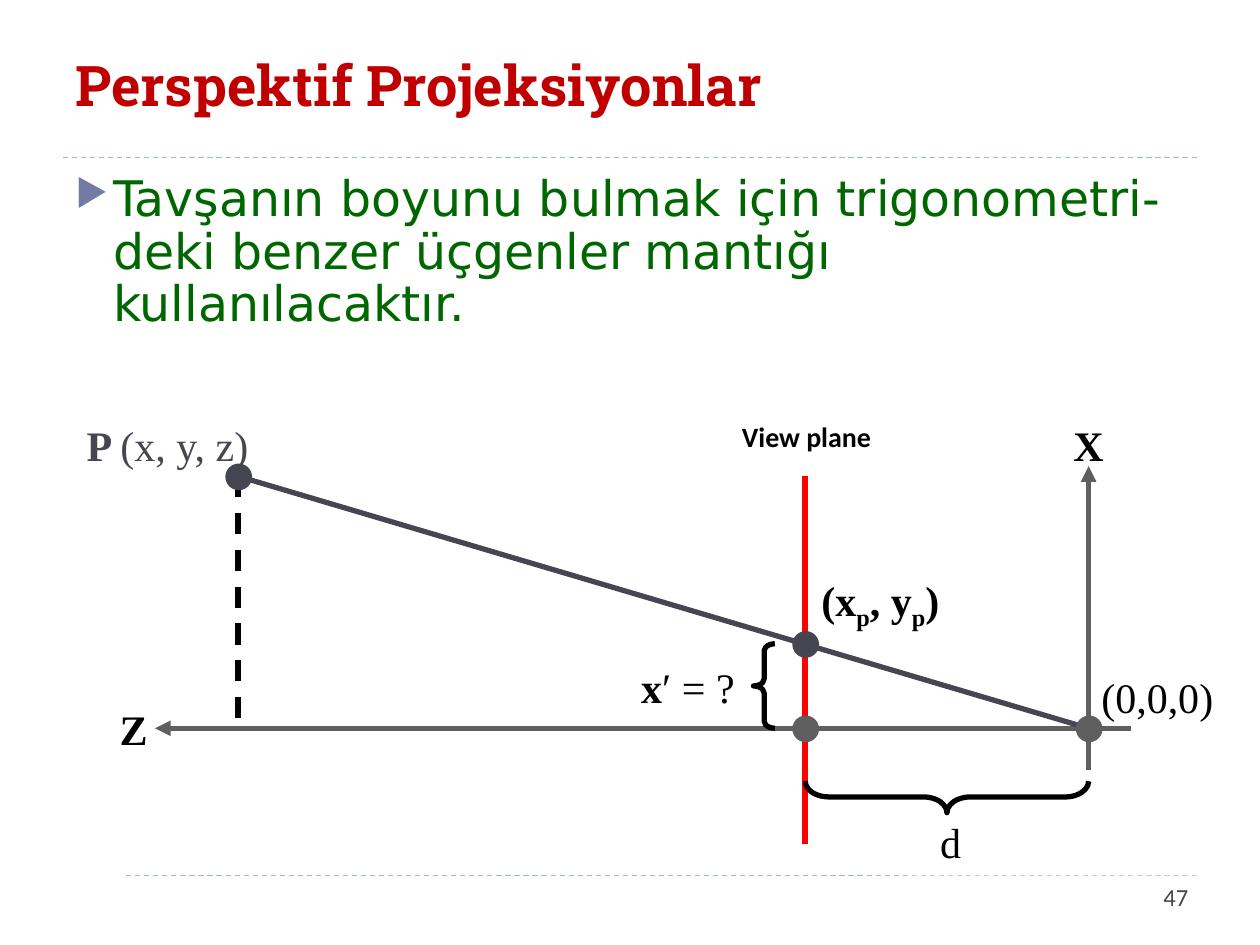
from lxml.etree import SubElement
from pptx import Presentation
from pptx.dml.color import RGBColor
from pptx.enum.dml import MSO_LINE
from pptx.enum.shapes import MSO_CONNECTOR, MSO_SHAPE
from pptx.enum.text import MSO_ANCHOR, PP_ALIGN
from pptx.oxml.ns import qn
from pptx.util import Inches, Pt

WHITE = RGBColor(0xFF, 0xFF, 0xFF)
BLACK = RGBColor(0x00, 0x00, 0x00)
RED = RGBColor(0xFF, 0x00, 0x00)
CRIMSON = RGBColor(0xC0, 0x00, 0x00)
GREEN = RGBColor(0x00, 0x66, 0x00)
SLATE = RGBColor(0x46, 0x46, 0x53)
GRAY = RGBColor(0x5F, 0x5F, 0x5F)
RULE_BLUE = RGBColor(0x9F, 0xB8, 0xCD)
BULLET_BLUE = RGBColor(0x72, 0x7C, 0xA3)
SERIF = "Times New Roman"

deck = Presentation()
deck.slide_width = Inches(10)
deck.slide_height = Inches(7.5)
page = deck.slides.add_slide(deck.slide_layouts[6])


def add_line(start, end, color, width=3, dashed=False, arrow=False):
    line = page.shapes.add_connector(
        MSO_CONNECTOR.STRAIGHT, *[Inches(value) for value in start + end]
    )
    line.line.color.rgb = color
    line.line.width = Pt(width)
    if dashed:
        line.line.dash_style = MSO_LINE.DASH
    if arrow:
        SubElement(line.line._get_or_add_ln(), qn("a:tailEnd"), type="triangle")
    SubElement(line._element.spPr, qn("a:effectLst"))


def add_text(place, spans, size, font, color, align=PP_ALIGN.LEFT,
             anchor=MSO_ANCHOR.TOP, wrap=True):
    box = page.shapes.add_textbox(*[Inches(value) for value in place])
    box.text_frame.word_wrap = wrap
    box.text_frame.vertical_anchor = anchor
    para = box.text_frame.paragraphs[0]
    para.alignment = align
    para.font.size = Pt(size)
    para.font.name = font
    para.font.color.rgb = color
    for text, bold in spans:
        span = para.add_run()
        span.text = text
        span.font.bold = bold
    return box


for left, top in [(0.5, 6.95), (0.5, 1.25)]:
    add_line((left, top), (9.5, top), RULE_BLUE, 0.75, dashed=True)

corner = page.shapes.add_shape(
    MSO_SHAPE.RECTANGLE, Inches(0.35), Inches(6.82), Inches(0.63), Inches(0.63)
)
corner.shadow.inherit = False
corner.fill.solid()
corner.fill.fore_color.rgb = WHITE
corner.line.fill.background()

add_text((0.5, 0.13, 9, 1.08), [("Perspektif Projeksiyonlar", True)],
         32, "Roboto Slab", CRIMSON, anchor=MSO_ANCHOR.MIDDLE)
number = add_text((7.2, 6.95, 2.33, 0.4), [("47", False)], 14, "Calibri", SLATE, PP_ALIGN.RIGHT)
number.fill.solid()
number.fill.fore_color.rgb = WHITE

sentence = "Tavşanın boyunu bulmak için trigonometri-deki benzer üçgenler mantığı kullanılacaktır."
body = add_text((0.5, 1.33, 9, 5.4), [(sentence, False)], 28, "DejaVu Sans", GREEN)
para = body.text_frame.paragraphs[0]
para.line_spacing = 0.9
para.space_before = Pt(6)
properties = para._p.get_or_add_pPr()
properties.set("marL", str(Inches(0.3)))
properties.set("indent", str(-Inches(0.3)))
bullet_color = SubElement(properties, qn("a:buClr"))
SubElement(bullet_color, qn("a:srgbClr"), val=str(BULLET_BLUE))
SubElement(properties, qn("a:buSzPct"), val="76000")
SubElement(properties, qn("a:buChar"), char="▶")
properties.append(properties.find(qn("a:defRPr")))

point, origin = (1.89, 3.78), (8.64, 5.78)
plane_x, projected_y = 6.39, 5.11

add_line(point, (point[0], origin[1]), BLACK, dashed=True)
add_line((8.98, origin[1]), (1.23, origin[1]), GRAY, arrow=True)
add_line((origin[0], 6.11), (origin[0], 3.7), GRAY, arrow=True)
add_line((plane_x, point[1]), (plane_x, 6.7), RED)
add_line(origin, point, SLATE)

for (x, y), color in [
    (point, SLATE),
    ((plane_x, projected_y), SLATE),
    ((plane_x, origin[1]), GRAY),
    (origin, GRAY),
]:
    dot = page.shapes.add_shape(
        MSO_SHAPE.OVAL, Inches(x - 0.08), Inches(y - 0.08), Inches(0.17), Inches(0.17)
    )
    dot.shadow.inherit = False
    dot.fill.solid()
    dot.fill.fore_color.rgb = color
    dot.line.color.rgb = color
    dot.line.width = Pt(3)

for kind, place, rotation, curve in [
    (MSO_SHAPE.RIGHT_BRACE, (7.39, 5.2, 0.25, 2.25), 90, 0.75),
    (MSO_SHAPE.LEFT_BRACE, (5.98, 5.11, 0.17, 0.67), 0, 0.33),
]:
    brace = page.shapes.add_shape(kind, *[Inches(value) for value in place])
    brace.rotation = rotation
    brace.adjustments[0] = curve
    brace.shadow.inherit = False
    brace.fill.background()
    brace.line.color.rgb = BLACK
    brace.line.width = Pt(3)

for place, spans, color in [
    ((7.36, 6.43, 0.37, 0.5), [("d", False)], BLACK),
    ((0.58, 3.28, 1.5, 0.5), [("P ", True), ("(x, y, z)", False)], SLATE),
    ((8.42, 3.28, 0.44, 0.5), [("X", True)], BLACK),
    ((0.85, 5.53, 0.42, 0.5), [("Z", True)], BLACK),
    ((8.64, 5.28, 1.09, 0.5), [("(0,0,0)", False)], BLACK),
    ((4.99, 5.2, 0.94, 0.5), [("x", True), ("′ = ?", False)], BLACK),
]:
    add_text(place, spans, 24, SERIF, color, PP_ALIGN.CENTER, MSO_ANCHOR.MIDDLE, wrap=False)

add_text((5.79, 3.28, 1.89, 0.37), [("View plane", True)], 16, "Calibri", BLACK)
projected = add_text((6.42, 4.51, 2.05, 0.5),
                     [(text, True) for text in ["(x", "p", ", y", "p", ")"]], 24, SERIF, BLACK)
for span in projected.text_frame.paragraphs[0].runs:
    if span.text == "p":
        span.font._element.set("baseline", "-25000")

deck.save("out.pptx")
